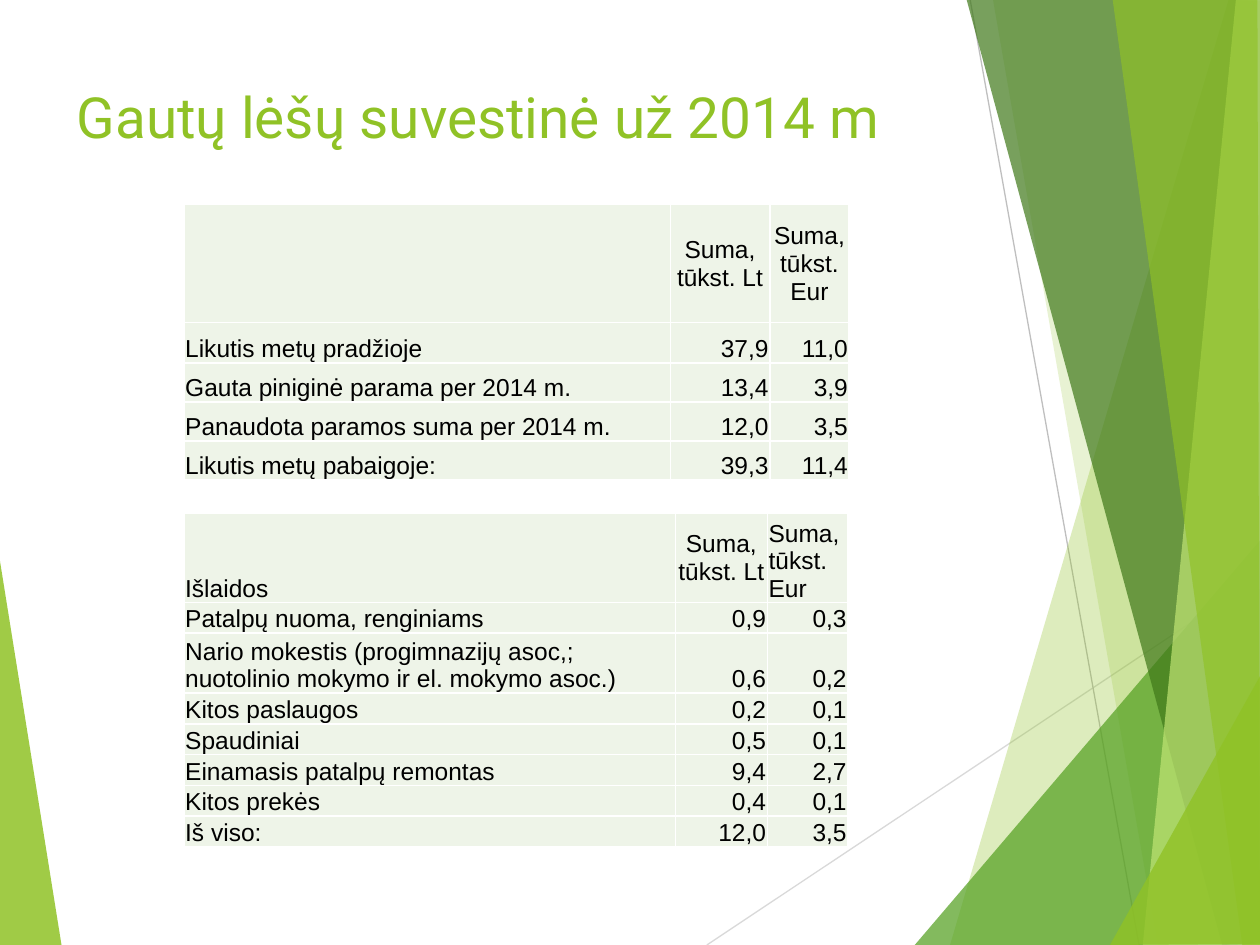
from dataclasses import dataclass

from lxml.etree import SubElement
from pptx import Presentation
from pptx.dml.color import RGBColor
from pptx.enum.shapes import MSO_CONNECTOR
from pptx.enum.text import MSO_ANCHOR, PP_ALIGN
from pptx.oxml import parse_xml
from pptx.oxml.ns import nsdecls, qn
from pptx.slide import Slide
from pptx.util import Inches, Pt

LIME = RGBColor(0x90, 0xC2, 0x26)
GREEN = RGBColor(0x54, 0xA0, 0x21)
DARK_GREEN = RGBColor(0x3F, 0x78, 0x19)
PALE_LIME = RGBColor(0xC0, 0xE4, 0x74)
LIGHT_GRAY = RGBColor(0xD9, 0xD9, 0xD9)
GRAY = RGBColor(0xBF, 0xBF, 0xBF)
CELL_FILL = RGBColor(0xEE, 0xF4, 0xE8)
BLACK = RGBColor(0, 0, 0)
WHITE = RGBColor(0xFF, 0xFF, 0xFF)

Point = tuple[float, float]


@dataclass
class Facet:
    points: list[Point]
    color: RGBColor
    opacity: int


@dataclass
class Ray:
    start: Point
    end: Point
    color: RGBColor


@dataclass
class SummaryTable:
    top: float
    columns: list[float]
    row_heights: list[float]
    rows: list[tuple[str, str, str]]
    last_header_format: tuple[PP_ALIGN, MSO_ANCHOR]


RAYS = [
    Ray((5.61, 7.5), (10.01, 4.57), LIGHT_GRAY),
    Ray((7.7, 0), (9.04, 7.5), GRAY),
]
LEFT_FACET = Facet([(-0.01, 4.39), (0.49, 7.51), (-0.01, 7.5)], LIME, 85)
RIGHT_FACETS = [
    Facet([(9.75, 0), (7.54, 7.5), (10.02, 7.51), (10.01, 0.01)], LIME, 30),
    Facet([(7.88, -0.01), (9.19, 7.5), (10.01, 7.5), (10.01, -0.01)], LIME, 20),
    Facet([(7.26, 7.5), (10, 4.29), (10.01, 7.5)], GREEN, 72),
    Facet([(7.67, -0.01), (9.7, 7.5), (10.01, 7.49), (10.01, -0.01)], DARK_GREEN, 70),
    Facet([(9.81, -0.01), (9.07, 7.5), (10.01, 7.5), (10, -0.01)], PALE_LIME, 70),
    Facet([(8.83, -0.01), (9.86, 7.5), (10, 7.5), (9.98, -0.01)], LIME, 65),
    Facet([(8.81, 7.5), (10.01, 5.35), (10.01, 7.49)], LIME, 80),
]

CENTERED = (PP_ALIGN.CENTER, MSO_ANCHOR.MIDDLE)
LABEL = (PP_ALIGN.LEFT, MSO_ANCHOR.BOTTOM)
NUMBER = (PP_ALIGN.RIGHT, MSO_ANCHOR.BOTTOM)
SUMS = ("Suma, tūkst. Lt", "Suma, tūkst. Eur")
TABLE_LEFT = 1.46

INCOME = SummaryTable(
    1.62, [3.86, 0.79, 0.63], [0.94, 0.32] + [0.31] * 3,
    [
        ("", *SUMS),
        ("Likutis metų pradžioje", "37,9", "11,0"),
        ("Gauta piniginė parama per 2014 m.", "13,4", "3,9"),
        ("Panaudota paramos suma per 2014 m.", "12,0", "3,5"),
        ("Likutis metų pabaigoje:", "39,3", "11,4"),
    ],
    CENTERED,
)
EXPENSES = SummaryTable(
    4.07, [3.9, 0.73, 0.64], [0.69, 0.23, 0.46] + [0.23] * 5,
    [
        ("Išlaidos", *SUMS),
        ("Patalpų nuoma, renginiams", "0,9", "0,3"),
        ("Nario mokestis (progimnazijų asoc,; nuotolinio mokymo ir el. mokymo asoc.)",
         "0,6", "0,2"),
        ("Kitos paslaugos", "0,2", "0,1"),
        ("Spaudiniai", "0,5", "0,1"),
        ("Einamasis patalpų remontas", "9,4", "2,7"),
        ("Kitos prekės", "0,4", "0,1"),
        ("Iš viso:", "12,0", "3,5"),
    ],
    LABEL,
)


def set_attributes(target: object, values: dict) -> None:
    for name, value in values.items():
        setattr(target, name, value)


def write(paragraph, text: str, font_name: str, size: float, color: RGBColor) -> None:
    run = paragraph.add_run()
    run.text = text
    set_attributes(run.font, {"name": font_name, "size": Pt(size), "bold": False})
    run.font.color.rgb = color


def draw_facet(slide: Slide, facet: Facet) -> None:
    start, *others = [(Inches(x), Inches(y)) for x, y in facet.points]
    builder = slide.shapes.build_freeform(*start, scale=1.0)
    builder.add_line_segments(others, close=True)
    shape = builder.convert_to_shape()
    shape.shadow.inherit = False
    shape.line.fill.background()
    shape.fill.solid()
    shape.fill.fore_color.rgb = facet.color
    color = shape._element.spPr.find(qn("a:solidFill"))[0]
    SubElement(color, qn("a:alpha")).set("val", str(facet.opacity * 1000))


def draw_ray(slide: Slide, ray: Ray) -> None:
    ends = [Inches(value) for value in (*ray.start, *ray.end)]
    connector = slide.shapes.add_connector(MSO_CONNECTOR.STRAIGHT, *ends)
    connector.line.color.rgb = ray.color
    connector.line.width = Pt(0.75)
    SubElement(connector._element.spPr, qn("a:effectLst"))


def add_borders(cell) -> None:
    properties = cell._tc.get_or_add_tcPr()
    for index, side in enumerate(("lnL", "lnR", "lnT", "lnB")):
        properties.insert(index, parse_xml(
            f'<a:{side} {nsdecls("a")} w="{Pt(1)}"><a:solidFill>'
            f'<a:srgbClr val="{WHITE}"/></a:solidFill></a:{side}>'))


def cell_format(table: SummaryTable, row: int, column: int) -> tuple[PP_ALIGN, MSO_ANCHOR]:
    if column == 0:
        return LABEL
    if row > 0:
        return NUMBER
    return CENTERED if column == 1 else table.last_header_format


def draw_table(slide: Slide, content: SummaryTable) -> None:
    frame = slide.shapes.add_table(
        len(content.rows), len(content.columns), Inches(TABLE_LEFT), Inches(content.top),
        Inches(sum(content.columns)), Inches(sum(content.row_heights)))
    table = frame.table
    set_attributes(table, {"first_row": False, "horz_banding": False})
    for column, width in zip(table.columns, content.columns):
        column.width = Inches(width)
    for row, height in zip(table.rows, content.row_heights):
        row.height = Inches(height)
    for row_index, texts in enumerate(content.rows):
        for column_index, text in enumerate(texts):
            cell = table.cell(row_index, column_index)
            alignment, anchor = cell_format(content, row_index, column_index)
            set_attributes(cell, {
                "margin_left": Inches(0.01), "margin_right": Inches(0.01),
                "margin_top": Inches(0.01), "margin_bottom": 0,
                "vertical_anchor": anchor,
            })
            cell.fill.solid()
            cell.fill.fore_color.rgb = CELL_FILL
            add_borders(cell)
            if text:
                paragraph = cell.text_frame.paragraphs[0]
                paragraph.alignment = alignment
                write(paragraph, text, "Arial", 14, BLACK)


def draw_title(slide: Slide) -> None:
    box = slide.shapes.add_textbox(Inches(0.51), Inches(0.6), Inches(8.95), Inches(1.15))
    set_attributes(box.text_frame, {"word_wrap": True, "vertical_anchor": MSO_ANCHOR.TOP})
    write(box.text_frame.paragraphs[0], "Gautų lėšų suvestinė už 2014 m", "Roboto", 32.4, LIME)


def main() -> None:
    presentation = Presentation()
    set_attributes(presentation, {"slide_width": Inches(10), "slide_height": Inches(7.5)})
    slide = presentation.slides.add_slide(presentation.slide_layouts[6])
    draw_facet(slide, LEFT_FACET)
    for ray in RAYS:
        draw_ray(slide, ray)
    for facet in RIGHT_FACETS:
        draw_facet(slide, facet)
    draw_title(slide)
    for table in (INCOME, EXPENSES):
        draw_table(slide, table)
    presentation.save("out.pptx")


if __name__ == "__main__":
    main()
